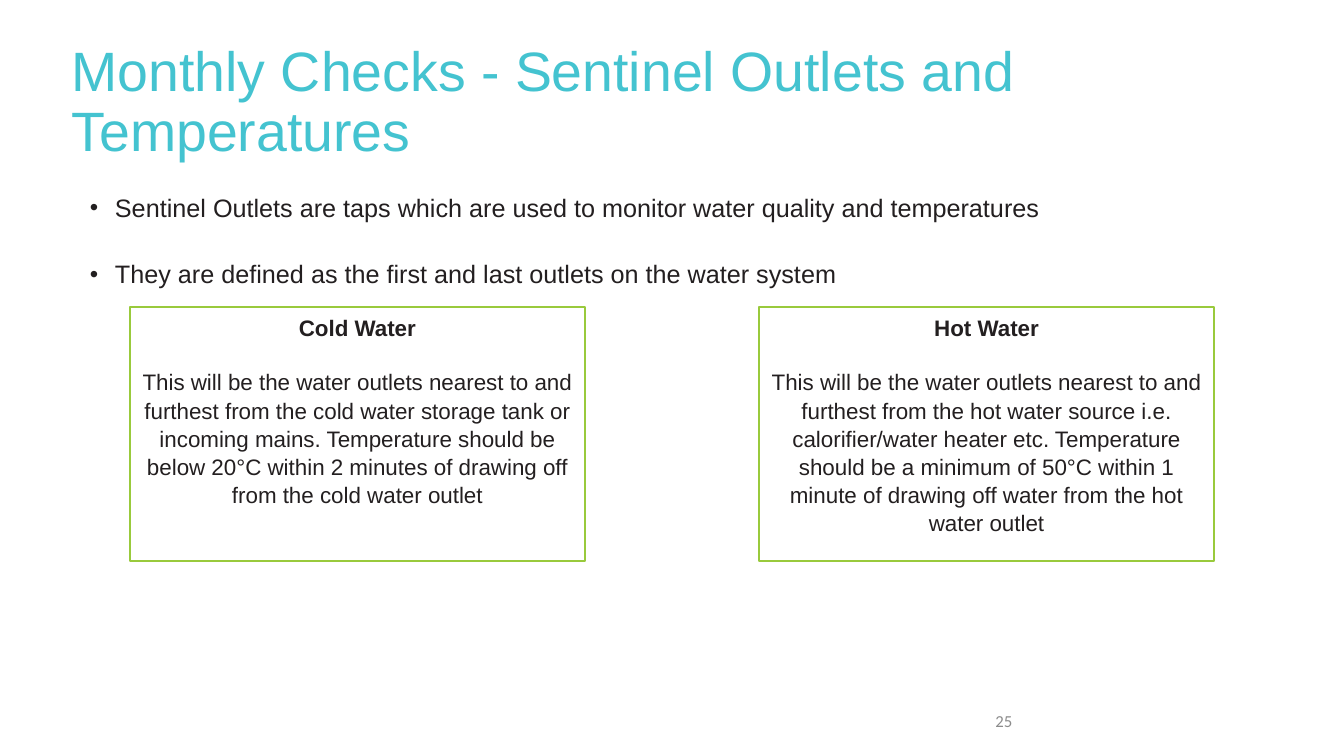
from dataclasses import dataclass

from lxml import etree
from pptx import Presentation
from pptx.dml.color import RGBColor
from pptx.enum.shapes import MSO_SHAPE
from pptx.enum.text import MSO_ANCHOR, MSO_AUTO_SIZE, PP_ALIGN
from pptx.oxml.ns import qn
from pptx.util import Inches, Pt

RECTANGLE = MSO_SHAPE.RECTANGLE
TOP, MIDDLE = MSO_ANCHOR.TOP, MSO_ANCHOR.MIDDLE
LEFT, CENTER = PP_ALIGN.LEFT, PP_ALIGN.CENTER
RIGHT, JUSTIFY = PP_ALIGN.RIGHT, PP_ALIGN.JUSTIFY
NO_AUTOFIT = MSO_AUTO_SIZE.NONE


@dataclass(frozen=True)
class Theme:
    font: str = "Arial"
    number_font: str = "Calibri"
    heading: str = "44C3D0"
    ink: str = "231F20"
    muted: str = "8C8C8C"
    accent: str = "99CA3C"
    paper: str = "FFFFFF"
    title_size: float = 39.6
    list_size: float = 18
    panel_size: float = 16
    number_size: float = 12


class SlideBuilder:
    """Adds themed elements to one slide."""

    def __init__(self, slide, theme):
        self.slide = slide
        self.theme = theme

    def place(self, shape, left, top, width, height):
        shape.left, shape.top = Inches(left), Inches(top)
        shape.width, shape.height = Inches(width), Inches(height)

    def fill_text(self, shape, text, size, color, align, anchor, font=None, spacing=1.0, gap=0):
        frame = shape.text_frame
        frame.text = text
        frame.word_wrap = True
        frame.auto_size = NO_AUTOFIT
        frame.vertical_anchor = anchor
        for index, paragraph in enumerate(frame.paragraphs):
            paragraph.alignment = align
            paragraph.line_spacing = spacing
            paragraph.space_before = Pt(gap if index else 0)
            for run in paragraph.runs:
                run.font.name = font or self.theme.font
                run.font.size = Pt(size)
                run.font.color.rgb = RGBColor.from_string(color)
        return frame.paragraphs

    def outline(self, shape, color, width):
        shape.line.color.rgb = RGBColor.from_string(color)
        shape.line.width = Pt(width)

    def title(self, text, *box):
        title = self.slide.shapes.title
        self.place(title, *box)
        self.fill_text(title, text, self.theme.title_size, self.theme.heading, LEFT, MIDDLE,
                       spacing=0.9)

    def bullets(self, points, *box):
        body = self.slide.placeholders[1]
        self.place(body, *box)
        body.fill.solid()
        body.fill.fore_color.rgb = RGBColor.from_string(self.theme.paper)
        self.outline(body, self.theme.paper, 1)
        paragraphs = self.fill_text(body, "\n".join(points), self.theme.list_size, self.theme.ink,
                                    JUSTIFY, TOP, spacing=0.9, gap=27.8)
        for paragraph in paragraphs:
            properties = paragraph._p.get_or_add_pPr()
            properties.set("marL", str(Inches(0.25)))
            properties.set("indent", str(Inches(-0.25)))
            etree.SubElement(properties, qn("a:buSzPct"), val="95000")
            etree.SubElement(properties, qn("a:buFont"), typeface=self.theme.font)
            etree.SubElement(properties, qn("a:buChar"), char="•")

    def panel(self, heading, detail, *box):
        panel = self.slide.shapes.add_shape(RECTANGLE, *map(Inches, box))
        panel.shadow.inherit = False
        panel.fill.background()
        self.outline(panel, self.theme.accent, 1.5)
        paragraphs = self.fill_text(panel, f"{heading}\n{detail}", self.theme.panel_size,
                                    self.theme.ink, CENTER, TOP, spacing=1.05, gap=19)
        paragraphs[0].runs[0].font.bold = True

    def page_number(self, number, *box):
        label = self.slide.shapes.add_textbox(*map(Inches, box))
        self.fill_text(label, number, self.theme.number_size, self.theme.muted, RIGHT, MIDDLE,
                       font=self.theme.number_font)


def main():
    deck = Presentation()
    deck.slide_width, deck.slide_height = Inches(13.33), Inches(7.5)
    builder = SlideBuilder(deck.slides.add_slide(deck.slide_layouts[1]), Theme())

    builder.page_number("25", 8.92, 6.95, 1.22, 0.4)
    builder.title("Monthly Checks - Sentinel Outlets and Temperatures", 0.61, 0.41, 11.43, 1.24)
    builder.bullets([
        "Sentinel Outlets are taps which are used to monitor water quality and temperatures",
        "They are defined as the first and last outlets on the water system",
    ], 0.79, 1.89, 11.5, 4.57)

    water_systems = [
        ("Cold Water",
         "This will be the water outlets nearest to and furthest from the cold water storage tank "
         "or incoming mains. Temperature should be below 20°C within 2 minutes of drawing off "
         "from the cold water outlet"),
        ("Hot Water",
         "This will be the water outlets nearest to and furthest from the hot water source i.e. "
         "calorifier/water heater etc. Temperature should be a minimum of 50°C within 1 minute "
         "of drawing off water from the hot water outlet"),
    ]
    for column, (heading, detail) in enumerate(water_systems):
        builder.panel(heading, detail, 1.29 + column * 6.24, 3.05, 4.51, 2.52)

    deck.save("out.pptx")


if __name__ == "__main__":
    main()
